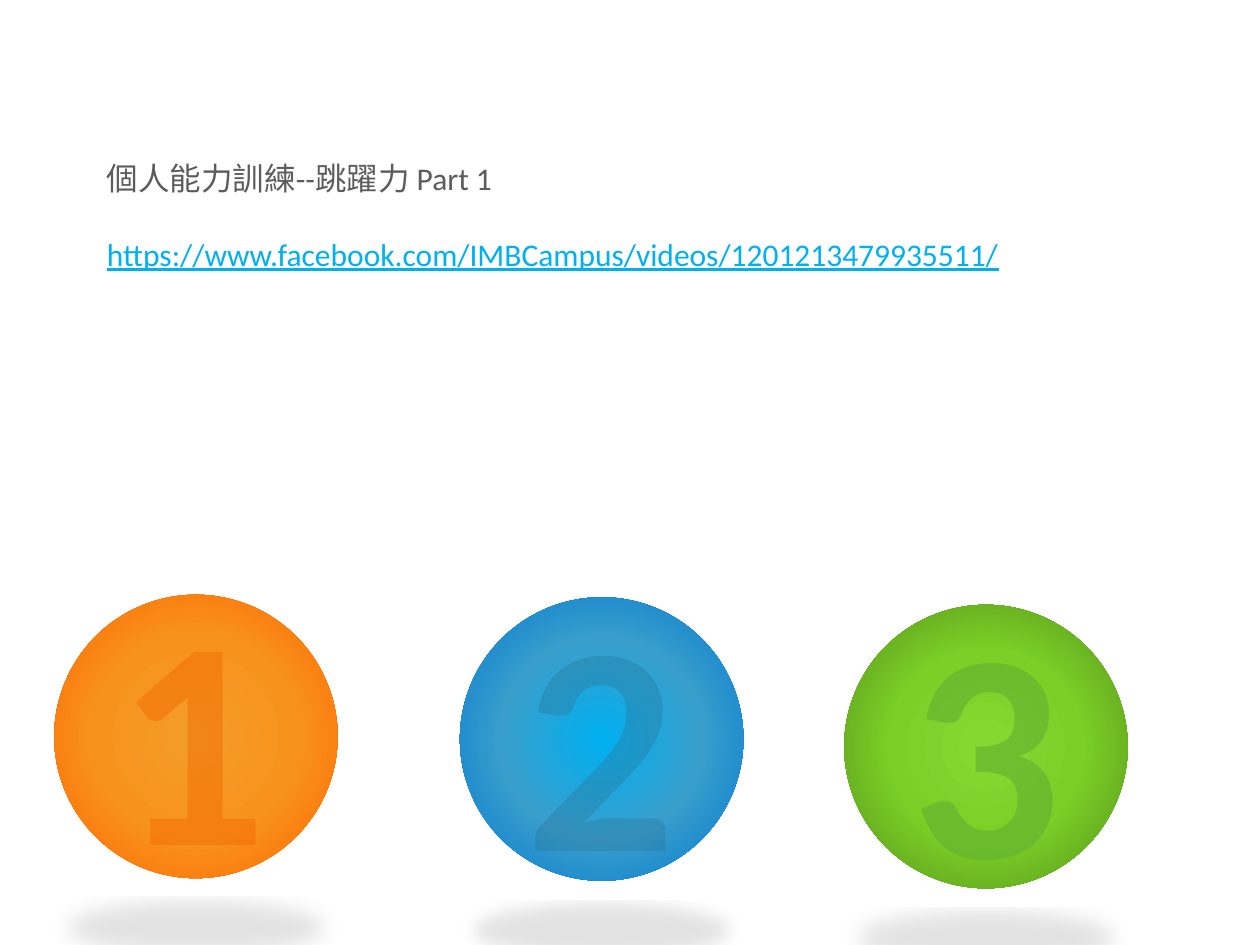
from lxml.etree import fromstring
from pptx import Presentation
from pptx.dml.color import RGBColor
from pptx.enum.shapes import MSO_SHAPE
from pptx.oxml.ns import qn
from pptx.util import Inches, Pt

NAMESPACE = "http://schemas.openxmlformats.org/drawingml/2006/main"

deck = Presentation()
deck.slide_width = Inches(10)
deck.slide_height = Inches(7.5)
page = deck.slides.add_slide(deck.slide_layouts[6])


def color(value):
    return RGBColor.from_string(value)


def write(para, text, size=18, fill="5C5C5C", bold=False, underline=False, alpha=None):
    span = para.add_run()
    span.text = text
    span.font.name = "Calibri"
    span.font.size = Pt(size)
    span.font.bold = bold
    span.font.underline = underline
    span.font.color.rgb = color(fill)
    if alpha:
        tint = span.font.fill._xPr.find(".//" + qn("a:srgbClr"))
        tint.append(fromstring(f'<a:alpha xmlns:a="{NAMESPACE}" val="{alpha * 1000}"/>'))


box = page.shapes.add_textbox(Inches(0.75), Inches(0.92), Inches(8.74), Inches(1.62))
frame = box.text_frame
frame.word_wrap = True
frame.margin_top = Inches(0.34)
write(frame.paragraphs[0], "個人能力訓練--跳躍力 Part 1")
para = frame.add_paragraph()
para.space_before = Pt(22)
write(para, "https://www.facebook.com/IMBCampus/videos/1201213479935511/",
      fill="00B0F0", underline=True)

balls = [
    ("1", 0.43, 4.72, 0.83, 4.30, [(0, "F39C29"), (50, "F7931D"), (100, "FF6600")], 12, "F26200", 40),
    ("2", 3.65, 4.74, 4.07, 4.35, [(0, "00B0F0"), (50, "399ECB"), (100, "0077D0")], 10, "2A7A9E", 40),
    ("3", 6.70, 4.80, 7.13, 4.40, [(5, "84D830"), (48, "7BCF27"), (100, "56901C")], 12, "65B131", 64),
]

for digit, left, top, digit_left, digit_top, stops, blur, digit_fill, alpha in balls:
    ball = page.shapes.add_shape(MSO_SHAPE.OVAL, Inches(left), Inches(top), Inches(2.25), Inches(2.25))
    ball.shadow.inherit = False
    ball.line.fill.background()
    stop_list = "".join(
        f'<a:gs pos="{place * 1000}"><a:srgbClr val="{value}"/></a:gs>' for place, value in stops)
    gradient = fromstring(
        f'<a:gradFill xmlns:a="{NAMESPACE}" rotWithShape="1"><a:gsLst>{stop_list}</a:gsLst>'
        '<a:path path="circle"><a:fillToRect l="50000" t="50000" r="50000" b="50000"/></a:path>'
        '</a:gradFill>')
    shadow = fromstring(
        f'<a:outerShdw xmlns:a="{NAMESPACE}" blurRad="{Pt(blur)}" dist="{Pt(13)}" dir="5400000" '
        'sx="90000" sy="-19000" algn="b" rotWithShape="0">'
        '<a:srgbClr val="000000"><a:alpha val="11000"/></a:srgbClr></a:outerShdw>')
    properties = ball._element.spPr
    properties.find(qn("a:prstGeom")).addnext(gradient)
    properties.find(qn("a:effectLst")).append(shadow)

    label = page.shapes.add_textbox(Inches(digit_left), Inches(digit_top), Inches(1.33), Inches(2.96))
    label.text_frame.word_wrap = True
    write(label.text_frame.paragraphs[0], digit, size=170, fill=digit_fill, bold=True, alpha=alpha)

deck.save("out.pptx")
